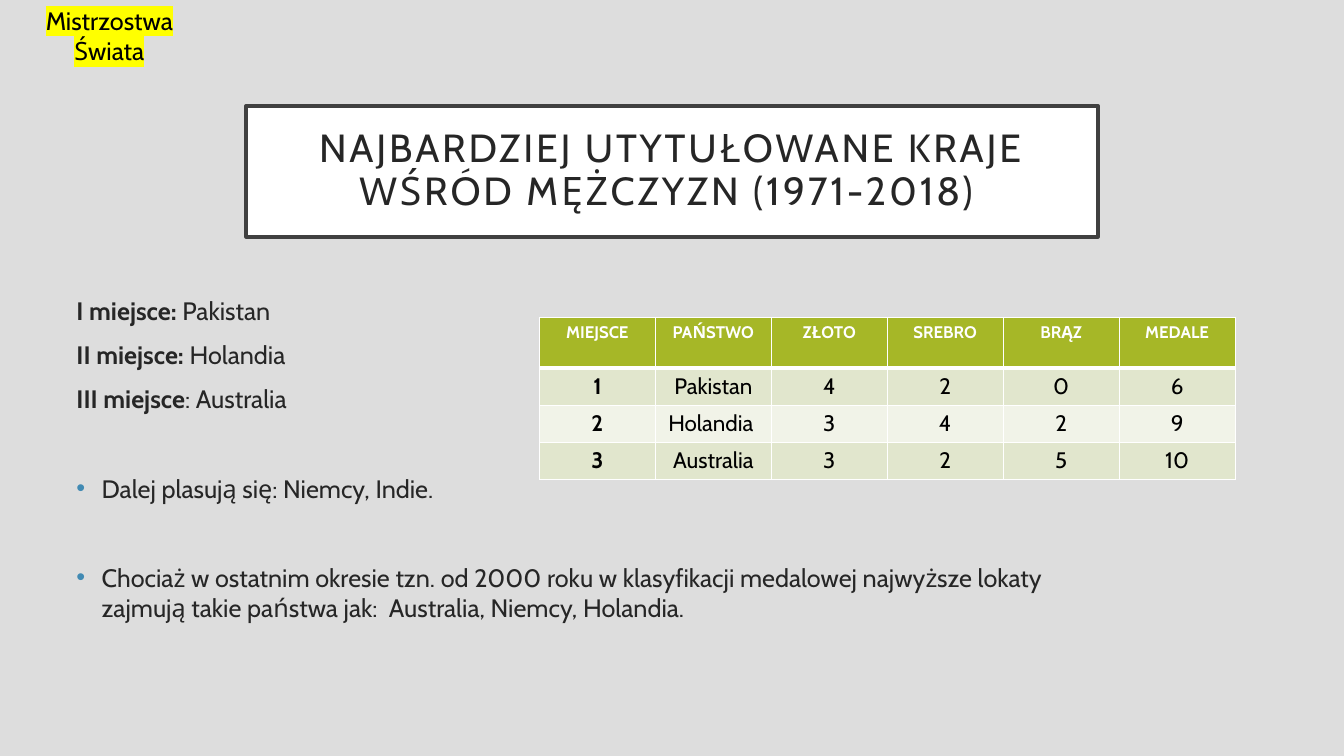
"""Build the slide on the most decorated men's teams at the World Championships."""
import enum

import lxml.etree
import pptx
import pptx.dml.color
import pptx.enum.shapes
import pptx.enum.text
import pptx.oxml.ns
import pptx.util

Inches = pptx.util.Inches
Pt = pptx.util.Pt
qn = pptx.oxml.ns.qn
CENTER = pptx.enum.text.PP_ALIGN.CENTER


class Theme(enum.Enum):
    FONT = "Cabin"
    BACKGROUND = "DDDDDD"
    WHITE = "FFFFFF"
    BLACK = "000000"
    INK = "262626"
    FRAME = "404040"
    BULLET = "418AB3"
    HIGHLIGHT = "FFFF00"
    HEADER = "A6B727"
    BAND_DARK = "E1E6CD"
    BAND_LIGHT = "F1F3E8"
    TITLE_SIZE = 28
    TEXT_SIZE = 18
    CELL_SIZE = 16
    HEADER_SIZE = 12


def color(entry):
    return pptx.dml.color.RGBColor.from_string(entry.value)


def add_run(paragraph, text, size, ink, bold=False):
    run = paragraph.add_run()
    run.text = text
    run.font.name = Theme.FONT.value
    run.font.size = Pt(size.value)
    run.font.bold = bold
    run.font.color.rgb = color(ink)
    return run


presentation = pptx.Presentation()
presentation.slide_width = Inches(13.33)
presentation.slide_height = Inches(7.5)
slide = presentation.slides.add_slide(presentation.slide_layouts[6])
slide.background.fill.solid()
slide.background.fill.fore_color.rgb = color(Theme.BACKGROUND)

title = slide.shapes.add_shape(
    pptx.enum.shapes.MSO_SHAPE.RECTANGLE, Inches(2.44), Inches(1.05), Inches(8.45), Inches(1.3)
)
title.shadow.inherit = False
title.fill.solid()
title.fill.fore_color.rgb = color(Theme.WHITE)
title.line.color.rgb = color(Theme.FRAME)
title.line.width = Pt(2.5)
frame = title.text_frame
frame.word_wrap = True
frame.vertical_anchor = pptx.enum.text.MSO_ANCHOR.MIDDLE
frame.margin_left = frame.margin_right = frame.margin_top = frame.margin_bottom = Inches(0.2)
paragraph = frame.paragraphs[0]
paragraph.alignment = CENTER
paragraph.line_spacing = 0.9
for index, line in enumerate(["NAJBARDZIEJ UTYTUŁOWANE KRAJE", "WŚRÓD MĘŻCZYZN (1971-2018) "]):
    if index:
        paragraph.add_line_break()
    run = add_run(paragraph, line, Theme.TITLE_SIZE, Theme.INK)
    run.font._element.set("spc", "200")

body = slide.shapes.add_textbox(Inches(0.66), Inches(2.88), Inches(10.23), Inches(3.39))
frame = body.text_frame
frame.word_wrap = True
places = [("I miejsce: ", "Pakistan"), ("II miejsce: ", "Holandia"), ("III miejsce", ": Australia")]
for index, (place, country) in enumerate(places):
    paragraph = frame.add_paragraph() if index else frame.paragraphs[0]
    paragraph.space_before = Pt(10)
    add_run(paragraph, place, Theme.TEXT_SIZE, Theme.INK, bold=True)
    add_run(paragraph, country, Theme.TEXT_SIZE, Theme.INK)

remarks = [
    "Dalej plasują się: Niemcy, Indie.",
    "Chociaż w ostatnim okresie tzn. od 2000 roku w klasyfikacji medalowej najwyższe lokaty "
    "zajmują takie państwa jak:  Australia, Niemcy, Holandia.",
]
for remark in remarks:
    paragraph = frame.add_paragraph()
    paragraph.space_before = Pt(42)
    add_run(paragraph, remark, Theme.TEXT_SIZE, Theme.INK)
    properties = paragraph._p.get_or_add_pPr()
    properties.set("marL", str(Inches(0.25)))
    properties.set("indent", str(-Inches(0.25)))
    bullet_color = lxml.etree.SubElement(properties, qn("a:buClr"))
    lxml.etree.SubElement(bullet_color, qn("a:srgbClr"), val=Theme.BULLET.value)
    lxml.etree.SubElement(properties, qn("a:buFont"), typeface="Arial")
    lxml.etree.SubElement(properties, qn("a:buChar"), char="•")

medals = [
    ["MIEJSCE", "PAŃSTWO", "ZŁOTO", "SREBRO", "BRĄZ", "MEDALE"],
    ["1", "Pakistan", "4", "2", "0", "6"],
    ["2", "Holandia ", "3", "4", "2", "9"],
    ["3", "Australia", "3", "2", "5", "10"],
]
row_fills = [Theme.HEADER, Theme.BAND_DARK, Theme.BAND_LIGHT, Theme.BAND_DARK]
table = slide.shapes.add_table(
    len(medals), len(medals[0]), Inches(5.35), Inches(3.15), Inches(6.9), Inches(1.61)
).table
for column in table.columns:
    column.width = Inches(1.15)
for row_index, values in enumerate(medals):
    header = row_index == 0
    table.rows[row_index].height = Inches(0.5 if header else 0.37)
    for column_index, value in enumerate(values):
        cell = table.cell(row_index, column_index)
        properties = cell._tc.get_or_add_tcPr()
        widths = {"L": 1, "R": 1, "T": 3 if row_index == 1 else 1, "B": 3 if header else 1}
        for side, width in widths.items():
            border = lxml.etree.SubElement(properties, qn(f"a:ln{side}"), w=str(Pt(width)))
            fill = lxml.etree.SubElement(border, qn("a:solidFill"))
            lxml.etree.SubElement(fill, qn("a:srgbClr"), val=Theme.WHITE.value)
        cell.fill.solid()
        cell.fill.fore_color.rgb = color(row_fills[row_index])
        paragraph = cell.text_frame.paragraphs[0]
        paragraph.alignment = CENTER
        size = Theme.HEADER_SIZE if header else Theme.CELL_SIZE
        ink = Theme.WHITE if header else Theme.BLACK
        add_run(paragraph, value, size, ink, bold=header or column_index == 0)

tag = slide.shapes.add_textbox(0, 0, Inches(2.17), Inches(0.4))
tag.text_frame.word_wrap = True
paragraph = tag.text_frame.paragraphs[0]
paragraph.alignment = CENTER
run = add_run(paragraph, "Mistrzostwa Świata", Theme.TEXT_SIZE, Theme.BLACK)
highlight = lxml.etree.Element(qn("a:highlight"))
lxml.etree.SubElement(highlight, qn("a:srgbClr"), val=Theme.HIGHLIGHT.value)
run.font._element.find(qn("a:solidFill")).addnext(highlight)

presentation.save("out.pptx")
